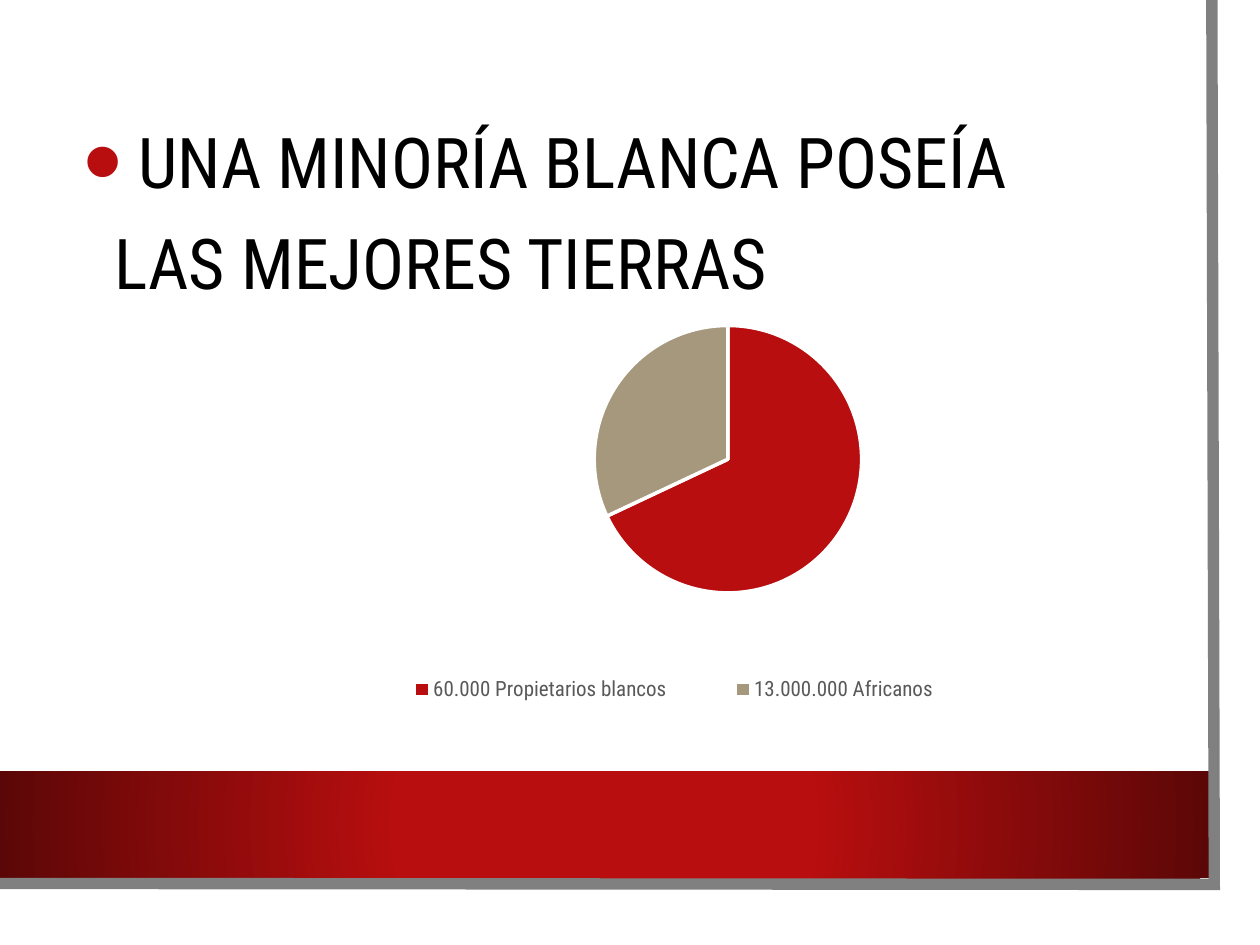
from lxml.etree import SubElement
from pptx import Presentation
from pptx.chart.data import CategoryChartData
from pptx.dml.color import RGBColor
from pptx.enum.chart import XL_CHART_TYPE, XL_LEGEND_POSITION
from pptx.enum.shapes import MSO_SHAPE
from pptx.enum.text import MSO_ANCHOR, MSO_AUTO_SIZE, PP_ALIGN
from pptx.oxml import parse_xml
from pptx.oxml.ns import nsdecls, qn
from pptx.util import Cm, Pt

WHITE = RGBColor(0xFF, 0xFF, 0xFF)
BLACK = RGBColor(0x00, 0x00, 0x00)
RED = RGBColor(0xB8, 0x0E, 0x0F)
DARK_RED = RGBColor(0x5C, 0x07, 0x07)
TAN = RGBColor(0xA6, 0x98, 0x7D)
FRAME_GREY = RGBColor(0x80, 0x80, 0x80)
LEGEND_GREY = RGBColor(0x59, 0x59, 0x59)


def format_font(font, name, size, color):
    font.name = name
    font.size = Pt(size)
    font.color.rgb = color


def write_text(paragraph, text, *, font, size, color, line_spacing=1.0):
    paragraph.alignment = PP_ALIGN.LEFT
    paragraph.line_spacing = line_spacing
    paragraph.space_before = Pt(0)
    run = paragraph.add_run()
    run.text = text
    format_font(run.font, font, size, color)


class SlideBuilder:
    font = "Roboto Condensed"

    def __init__(self, slide):
        self.slide = slide

    def rectangle(self, left, top, width, height, color):
        shape = self.slide.shapes.add_shape(
            MSO_SHAPE.RECTANGLE, Cm(left), Cm(top), Cm(width), Cm(height))
        shape.shadow.inherit = False
        shape.fill.solid()
        shape.fill.fore_color.rgb = color
        shape.line.fill.background()
        return shape

    def radial_band(self, left, top, width, height, inner, outer):
        shape = self.rectangle(left, top, width, height, inner)
        gradient = parse_xml(
            f'<a:gradFill {nsdecls("a")} rotWithShape="1"><a:gsLst>'
            f'<a:gs pos="34000"><a:srgbClr val="{inner}"/></a:gs>'
            f'<a:gs pos="100000"><a:srgbClr val="{outer}"/></a:gs></a:gsLst>'
            '<a:path path="circle"><a:fillToRect l="50000" t="50000" '
            'r="50000" b="50000"/></a:path></a:gradFill>')
        properties = shape._element.spPr
        properties.replace(properties.find(qn("a:solidFill")), gradient)

    def open_outline(self, points, color, width):
        start, *others = [(Cm(x), Cm(y)) for x, y in points]
        builder = self.slide.shapes.build_freeform(*start)
        builder.add_line_segments(others, close=False)
        shape = builder.convert_to_shape()
        shape.shadow.inherit = False
        shape.fill.background()
        shape.line.color.rgb = color
        shape.line.width = Pt(width)
        SubElement(shape._element.spPr.find(qn("a:ln")), qn("a:miter"),
                   lim="800000")

    def bullet_body(self, text, left, top, width, height):
        body = self.slide.placeholders[1]
        self.slide.shapes._spTree.append(body._element)
        body.left, body.top = Cm(left), Cm(top)
        body.width, body.height = Cm(width), Cm(height)
        frame = body.text_frame
        frame.word_wrap = True
        frame.auto_size = MSO_AUTO_SIZE.NONE
        frame.vertical_anchor = MSO_ANCHOR.TOP
        paragraph = frame.paragraphs[0]
        write_text(paragraph, text, font=self.font, size=40, color=BLACK,
                   line_spacing=1.2)
        properties = paragraph._p.get_or_add_pPr()
        properties.set("marL", str(Cm(0.64)))
        properties.set("indent", str(-Cm(0.64)))
        bullet_color = SubElement(properties, qn("a:buClr"))
        SubElement(bullet_color, qn("a:srgbClr"), val=str(RED))
        SubElement(properties, qn("a:buSzPct"), val="160000")
        SubElement(properties, qn("a:buFont"), typeface="Arial")
        SubElement(properties, qn("a:buChar"), char="•")

    def pie(self, slices, left, top, width, height, plot, legend):
        data = CategoryChartData()
        data.categories = [label for label, value, color in slices]
        data.add_series("Series 1", [value for label, value, color in slices])
        chart = self.slide.shapes.add_chart(
            XL_CHART_TYPE.PIE, Cm(left), Cm(top), Cm(width), Cm(height),
            data).chart
        format_font(chart.font, self.font, 10, BLACK)
        chart.has_title = False
        chart.has_legend = True
        chart.legend.position = XL_LEGEND_POSITION.BOTTOM
        chart.legend.include_in_layout = False
        format_font(chart.legend.font, self.font, 12, LEGEND_GREY)
        chart.plots[0].vary_by_categories = True
        series = chart.plots[0].series[0]
        for index, (label, value, color) in enumerate(slices):
            point = series.points[index].format
            point.fill.solid()
            point.fill.fore_color.rgb = color
            point.line.color.rgb = WHITE
            point.line.width = Pt(2)
        self.place_part(chart._chartSpace.chart.plotArea, 0, plot,
                        [("layoutTarget", "inner")])
        self.place_part(chart.legend._element, 1, legend)

    def place_part(self, part, position, bounds, target=()):
        for existing in part.findall(qn("c:layout")):
            part.remove(existing)
        settings = [*target, ("xMode", "edge"), ("yMode", "edge"),
                    *zip("xywh", bounds)]
        entries = "".join(f'<c:{tag} val="{value}"/>' for tag, value in settings)
        part.insert(position, parse_xml(
            f'<c:layout {nsdecls("c")}><c:manualLayout>{entries}'
            '</c:manualLayout></c:layout>'))


def main():
    presentation = Presentation()
    presentation.slide_width = Cm(25.4)
    presentation.slide_height = Cm(19.05)
    slide = presentation.slides.add_slide(presentation.slide_layouts[1])
    title = slide.shapes.title._element
    title.getparent().remove(title)

    builder = SlideBuilder(slide)
    builder.rectangle(0, 0, 24.97, 18.47, WHITE)
    builder.radial_band(0, 15.55, 24.37, 2.16, RED, DARK_RED)
    builder.open_outline([(24.43, 0), (24.48, 17.83), (-0.05, 17.81)],
                         FRAME_GREY, 6.5)
    builder.bullet_body(" UNA MINORÍA BLANCA POSEÍA LAS MEJORES TIERRAS",
                        1.42, 1.93, 21.67, 13)
    builder.pie([("60.000 Propietarios blancos", 68, RED),
                 ("13.000.000 Africanos", 32, TAN)],
                5.31, 6.12, 18.01, 8.84,
                plot=(0.05, 0.05, 0.94, 0.61), legend=(0.1, 0.83, 0.72, 0.1))
    presentation.save("out.pptx")


if __name__ == "__main__":
    main()
